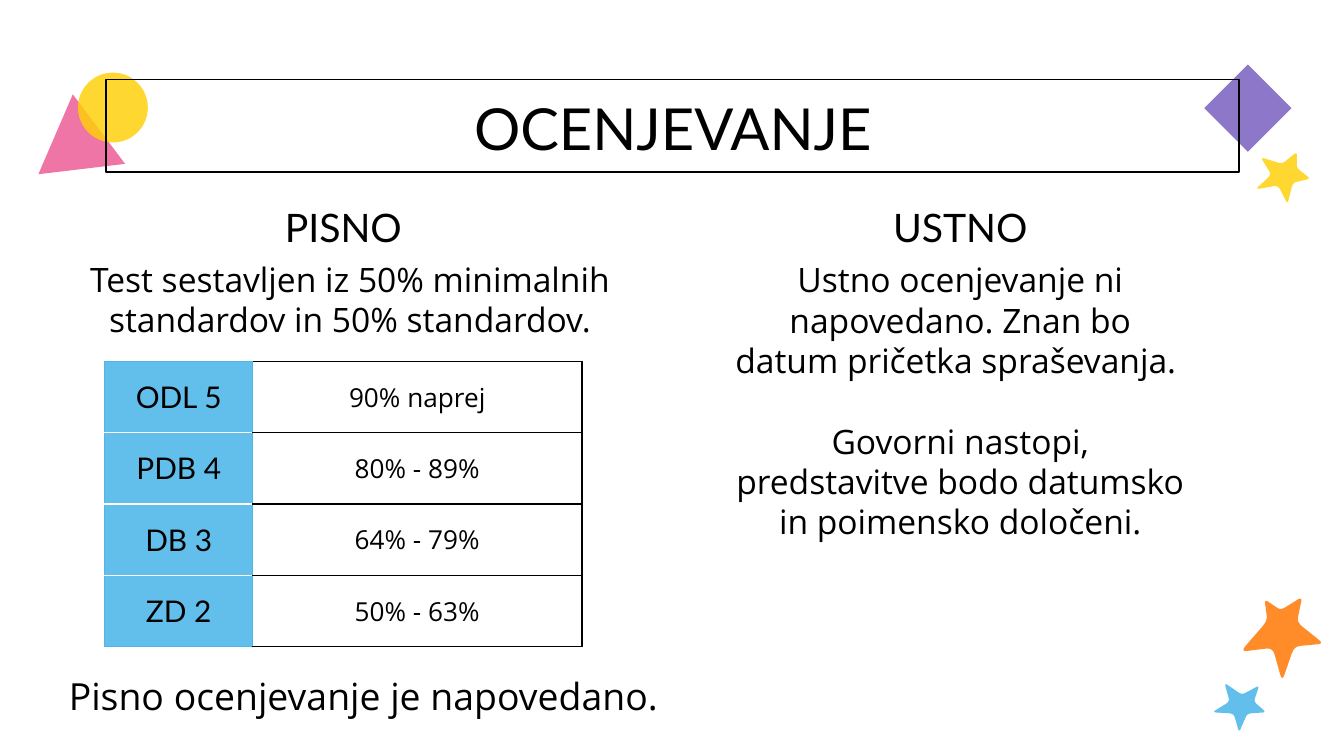
from dataclasses import dataclass, field
from typing import Any

from lxml import etree
from pptx import Presentation
from pptx import util as u
from pptx.dml import color as dml
from pptx.enum import shapes, text
from pptx.oxml import ns

PX = 9144  # 100 px to the inch
SLIDE_WIDTH = 1000 * PX
SLIDE_HEIGHT = SLIDE_WIDTH * 9 // 16
INSET = 10


@dataclass(frozen=True)
class Theme:
    black: str = "000000"
    white: str = "FFFFFF"
    pink: str = "EC6299"
    yellow: str = "FFD008"
    purple: str = "8067C2"
    orange: str = "FF7700"
    blue: str = "4FB6E8"
    heading_font: str = "Lato"
    body_font: str = "Open Sans"
    title_size: float = 31
    heading_size: float = 21
    note_size: float = 20
    body_size: float = 18
    body_leading: float = 21.6
    grade_size: float = 16
    range_size: float = 14
    rule: float = 0.75


THEME = Theme()


@dataclass(frozen=True)
class Box:
    left: int
    top: int
    width: int
    height: int

    def emu(self) -> tuple[int, ...]:
        return tuple(v * PX for v in (self.left, self.top, self.width, self.height))


@dataclass(frozen=True)
class Ornament:
    preset: Any
    box: Box
    color: str
    alpha: int
    rotation: float = 0


@dataclass(frozen=True)
class Star:
    outline: list[tuple[int, int]]  # tips and notches in turn
    color: str
    alpha: int


@dataclass(frozen=True)
class Caption:
    box: Box
    paragraphs: list[str]
    font: str
    size: float
    anchor: Any
    leading: float | None = None
    frame: dict[str, Any] = field(default_factory=dict)


ORNAMENTS = [
    Ornament(shapes.MSO_SHAPE.ISOSCELES_TRIANGLE, Box(25, 70, 65, 56), THEME.pink, 88, 353.2),
    Ornament(shapes.MSO_SHAPE.OVAL, Box(58, 54, 52, 52), THEME.yellow, 83),
    Ornament(shapes.MSO_SHAPE.DIAMOND, Box(896, 48, 65, 65), THEME.purple, 89),
]

STARS = [
    Star([(965, 113), (954, 122), (938, 117), (946, 130), (934, 141),
          (951, 138), (958, 152), (962, 136), (975, 133), (965, 125)], THEME.yellow, 83),
    Star([(969, 444), (965, 463), (985, 479), (963, 481), (954, 507),
          (947, 482), (923, 485), (943, 462), (941, 446), (953, 454)], THEME.orange, 84),
    Star([(937, 510), (924, 517), (911, 508), (915, 522), (902, 530),
          (918, 531), (922, 545), (928, 531), (942, 530), (933, 522)], THEME.blue, 89),
]

TITLE = Caption(Box(79, 59, 843, 69), ["OCENJEVANJE"], THEME.heading_font,
                THEME.title_size, text.MSO_ANCHOR.TOP)

CAPTIONS = [
    Caption(Box(78, 142, 355, 54), ["PISNO"], THEME.heading_font,
            THEME.heading_size, text.MSO_ANCHOR.BOTTOM),
    Caption(Box(514, 142, 401, 54), ["USTNO"], THEME.heading_font,
            THEME.heading_size, text.MSO_ANCHOR.BOTTOM),
    Caption(Box(40, 186, 441, 73),
            ["Test sestavljen iz 50% minimalnih standardov in 50% standardov."],
            THEME.body_font, THEME.body_size, text.MSO_ANCHOR.MIDDLE, THEME.body_leading),
    Caption(Box(23, 481, 495, 73), ["Pisno ocenjevanje je napovedano."],
            THEME.body_font, THEME.note_size, text.MSO_ANCHOR.MIDDLE),
    Caption(Box(537, 186, 355, 246),
            ["Ustno ocenjevanje ni napovedano. Znan bo datum pričetka spraševanja. ",
             "Govorni nastopi, predstavitve bodo datumsko in poimensko določeni."],
            THEME.body_font, THEME.body_size, text.MSO_ANCHOR.TOP, THEME.body_leading,
            {"margin_top": 7 * PX}),
]

GRADES_BOX = Box(78, 269, 355, 212)
GRADE_COLUMNS = [110, 245]
GRADES = [("ODL 5", "90% naprej"), ("PDB 4", "80% - 89%"),
          ("DB 3", "64% - 79%"), ("ZD 2", "50% - 63%")]


def apply(target: Any, values: dict[str, Any]) -> None:
    for name, value in values.items():
        setattr(target, name, value)


def margins() -> dict[str, int]:
    return {f"margin_{side}": INSET * PX for side in ("left", "top", "right", "bottom")}


def rgb(color: str) -> dml.RGBColor:
    return dml.RGBColor.from_string(color)


def fill_solid(fill: Any, holder: Any, color: str, alpha: int) -> None:
    """Fill with a colour at the given opacity in percent."""
    fill.solid()
    fill.fore_color.rgb = rgb(color)
    tint = holder.find(ns.qn("a:solidFill")).find(ns.qn("a:srgbClr"))
    etree.SubElement(tint, ns.qn("a:alpha"), val=str(alpha * 1000))


def paint(shape: Any, color: str, alpha: int) -> None:
    shape.shadow.inherit = False
    fill_solid(shape.fill, shape._element.spPr, color, alpha)
    shape.line.fill.background()


def draw_ornament(slide: Any, ornament: Ornament) -> None:
    shape = slide.shapes.add_shape(ornament.preset, *ornament.box.emu())
    shape.rotation = ornament.rotation
    paint(shape, ornament.color, ornament.alpha)


def rounded(outline: list[tuple[int, int]], reach: float = 0.2, steps: int = 4) -> list[tuple[int, int]]:
    """Replace each corner by a quadratic curve; return EMU points."""
    points = []
    for i, corner in enumerate(outline):
        before, after = outline[i - 1], outline[(i + 1) % len(outline)]
        for step in range(steps + 1):
            t = step / steps
            back, ahead = reach * (1 - t) ** 2, reach * t ** 2
            points.append(tuple(round(PX * (c + back * (b - c) + ahead * (a - c)))
                                for b, c, a in zip(before, corner, after)))
    return points


def draw_star(slide: Any, star: Star) -> None:
    start, *rest = rounded(star.outline)
    builder = slide.shapes.build_freeform(*start, scale=1.0)
    builder.add_line_segments(rest, close=True)
    paint(builder.convert_to_shape(), star.color, star.alpha)


def style_paragraph(paragraph: Any, font: str, size: float) -> None:
    paragraph.alignment = text.PP_ALIGN.CENTER
    apply(paragraph.font, {"name": font, "size": u.Pt(size)})
    paragraph.font.color.rgb = rgb(THEME.black)


def write(shape: Any, caption: Caption) -> None:
    frame = shape.text_frame
    apply(frame, {"word_wrap": True, "vertical_anchor": caption.anchor,
                  **margins(), **caption.frame})
    frame.text = "\n".join(caption.paragraphs)
    for i, paragraph in enumerate(frame.paragraphs):
        style_paragraph(paragraph, caption.font, caption.size)
        if caption.leading:
            paragraph.line_spacing = u.Pt(caption.leading)
            if i:
                paragraph.space_before = u.Pt(caption.leading)


def draw_title(slide: Any) -> None:
    frame = slide.shapes.add_shape(shapes.MSO_SHAPE.RECTANGLE, *TITLE.box.emu())
    frame.shadow.inherit = False
    frame.fill.background()
    frame.line.color.rgb = rgb(THEME.black)
    frame.line.width = u.Pt(THEME.rule)
    write(frame, TITLE)


def set_borders(cell: Any, borders: dict[str, str]) -> None:
    """Put borders, keyed L, R, T, B in that order, ahead of the cell fill."""
    properties = cell._tc.get_or_add_tcPr()
    for i, (side, color) in enumerate(borders.items()):
        line = etree.Element(ns.qn(f"a:ln{side}"), w=str(u.Pt(THEME.rule)))
        solid = etree.SubElement(line, ns.qn("a:solidFill"))
        etree.SubElement(solid, ns.qn("a:srgbClr"), val=color)
        properties.insert(i, line)


def draw_grades(slide: Any) -> None:
    grades = slide.shapes.add_table(len(GRADES), len(GRADE_COLUMNS), *GRADES_BOX.emu()).table
    apply(grades, {"first_row": False, "horz_banding": False})
    for column, width in zip(grades.columns, GRADE_COLUMNS):
        column.width = width * PX
    styles = [(THEME.heading_font, THEME.grade_size), (THEME.body_font, THEME.range_size)]
    for r, row in enumerate(GRADES):
        for c, (label, style) in enumerate(zip(row, styles)):
            cell = grades.cell(r, c)
            apply(cell, {"text": label, "vertical_anchor": text.MSO_ANCHOR.MIDDLE, **margins()})
            style_paragraph(cell.text_frame.paragraphs[0], *style)
            if c == 0:
                fill_solid(cell.fill, cell._tc.tcPr, THEME.blue, 89)
                top = THEME.white if r else THEME.blue
                bottom = THEME.white if r < len(GRADES) - 1 else THEME.blue
                sides = (THEME.blue, THEME.blue, top, bottom)
            else:
                cell.fill.background()
                sides = (THEME.blue, THEME.black, THEME.black, THEME.black)
            set_borders(cell, dict(zip("LRTB", sides)))


def main() -> None:
    deck = Presentation()
    apply(deck, {"slide_width": SLIDE_WIDTH, "slide_height": SLIDE_HEIGHT})
    slide = deck.slides.add_slide(deck.slide_layouts[6])
    for ornament in ORNAMENTS:
        draw_ornament(slide, ornament)
    for star in STARS:
        draw_star(slide, star)
    draw_title(slide)
    draw_grades(slide)
    for caption in CAPTIONS:
        write(slide.shapes.add_textbox(*caption.box.emu()), caption)
    deck.save("out.pptx")


if __name__ == "__main__":
    main()
